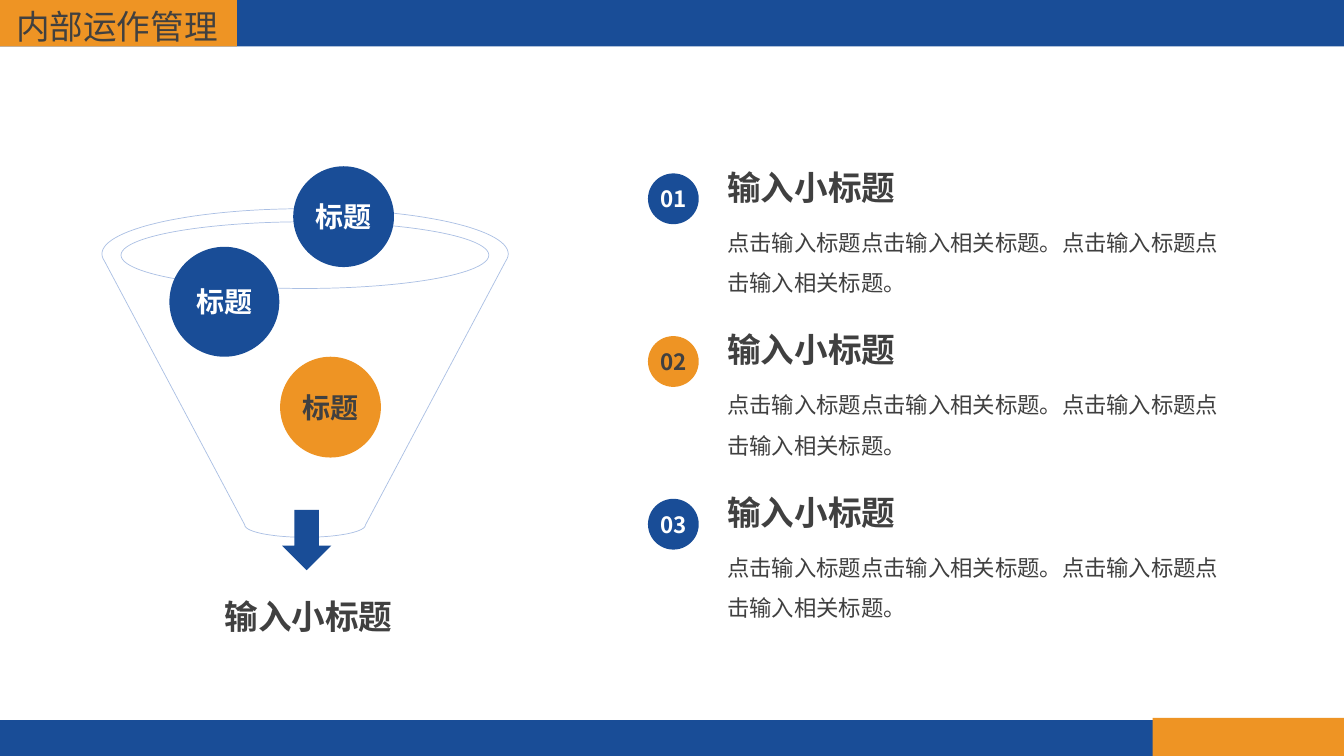
from math import cos, radians, sin

from lxml import etree
from pptx import Presentation
from pptx.dml.color import RGBColor
from pptx.enum.shapes import MSO_SHAPE
from pptx.enum.text import MSO_ANCHOR, MSO_AUTO_SIZE, PP_ALIGN
from pptx.oxml.ns import qn
from pptx.util import Cm, Pt

RECT, OVAL, ARROW = MSO_SHAPE.RECTANGLE, MSO_SHAPE.OVAL, MSO_SHAPE.DOWN_ARROW
TOP, MIDDLE = MSO_ANCHOR.TOP, MSO_ANCHOR.MIDDLE
LEFT, CENTER, JUSTIFY = PP_ALIGN.LEFT, PP_ALIGN.CENTER, PP_ALIGN.JUSTIFY
FIXED = MSO_AUTO_SIZE.NONE

BLUE = RGBColor(0x19, 0x4D, 0x97)
ORANGE = RGBColor(0xEE, 0x94, 0x24)
PALE = RGBColor(0xAB, 0xC0, 0xE4)
DARK = RGBColor(0x40, 0x40, 0x40)
WHITE = RGBColor(0xFF, 0xFF, 0xFF)
FONT = "Noto Sans CJK SC"

# Content; lengths in centimetres
WIDE, HIGH = 33.87, 19.05
TITLE = "内部运作管理"
RESULT = "输入小标题"
DETAIL = "点击输入标题点击输入相关标题。点击输入标题点击输入相关标题。"
ITEMS = [
    ("01", "输入小标题", DETAIL, BLUE),
    ("02", "输入小标题", DETAIL, ORANGE),
    ("03", "输入小标题", DETAIL, BLUE),
]
BARS = [  # left, top, width, height, colour
    (0, 0, WIDE, 1.17, BLUE),
    (0, 18.15, WIDE, 0.9, BLUE),
    (29.05, 18.09, 4.82, 0.96, ORANGE),
    (0, 0, 5.97, 1.17, ORANGE),
]
BALLS = [  # label, left, top, size, colour
    ("标题", 4.27, 6.22, 2.77, BLUE),
    ("标题", 7.39, 4.19, 2.54, BLUE),
    ("标题", 7.06, 8.99, 2.54, ORANGE),
]
MID = 7.69  # funnel axis
RIM = (6.4, 5.12, 1.14, 171, 369)  # centre y, radii, start and end angle
SPOUT = (13.23, 1.52, 0.31, 0, 180)
PITCH = 4.1  # distance between items

deck = Presentation()
deck.slide_width, deck.slide_height = Cm(WIDE), Cm(HIGH)
slide = deck.slides.add_slide(deck.slide_layouts[5])
shapes = slide.shapes


def box(*sides):
    return [Cm(side) for side in sides]


def write(shape, text, size, color, bold=False, align=LEFT, anchor=TOP, wrap=False):
    frame = shape.text_frame
    frame.text = text
    frame.word_wrap = wrap
    frame.auto_size = FIXED
    frame.vertical_anchor = anchor
    para = frame.paragraphs[0]
    para.alignment = align
    run = para.runs[0]
    font = run.font
    font.name, font.size, font.bold = FONT, Pt(size), bold
    font.color.rgb = color
    east = etree.SubElement(font._element, qn("a:ea"))
    east.set("typeface", FONT)
    return para


def style(shape, fill=None):
    shape.shadow.inherit = False
    if fill is None:
        shape.fill.background()
        shape.line.color.rgb = PALE
        shape.line.width = Pt(0.5)
    else:
        shape.fill.solid()
        shape.fill.fore_color.rgb = fill
        shape.line.fill.background()


def draw(kind, place, fill=None):
    shape = shapes.add_shape(kind, *box(*place))
    style(shape, fill)
    return shape


def disc(text, left, top, size, fill, points):
    shape = draw(OVAL, (left, top, size, size), fill)
    color = DARK if fill == ORANGE else WHITE
    write(shape, text, points, color, True, CENTER, MIDDLE)


def label(place, text, size, bold=False, wrap=True):
    return write(shapes.add_textbox(*box(*place)), text, size, DARK, bold, wrap=wrap)


def arc(mid, wide, high, start, end):
    angles = [radians(turn) for turn in range(start, end + 1, 3)]
    return [(Cm(MID + wide * cos(a)), Cm(mid + high * sin(a))) for a in angles]


# Header and footer bars
for *place, color in BARS:
    draw(RECT, place, color)

# Title, brought in front of the bars
title = shapes.title
title.left, title.top, title.width, title.height = box(0.15, 0.02, 5.65, 1.28)
write(title, TITLE, 24, DARK, align=JUSTIFY)
shapes._spTree.append(title._element)

# Funnel
edge = arc(*RIM) + arc(*SPOUT)
pen = shapes.build_freeform(*edge[0])
pen.add_line_segments(edge[1:], close=True)
style(pen.convert_to_shape())
draw(OVAL, (3.05, 5.59, 9.27, 1.68))
for ball in BALLS:
    disc(*ball, 20)
draw(ARROW, (7.11, 12.85, 1.24, 1.52), BLUE)
label((5.41, 14.88, 4.78, 1.27), RESULT, 24, True, wrap=False)

# Numbered items
for row, (number, head, detail, color) in enumerate(ITEMS):
    drop = row * PITCH
    disc(number, 16.33, 4.37 + drop, 1.28, color, 16)
    label((18.08, 5.3 + drop, 13.18, 2.18), detail, 16).line_spacing = 1.5
    label((18.08, 4.07 + drop, 5.89, 1.27), head, 24, True)

deck.save("out.pptx")
